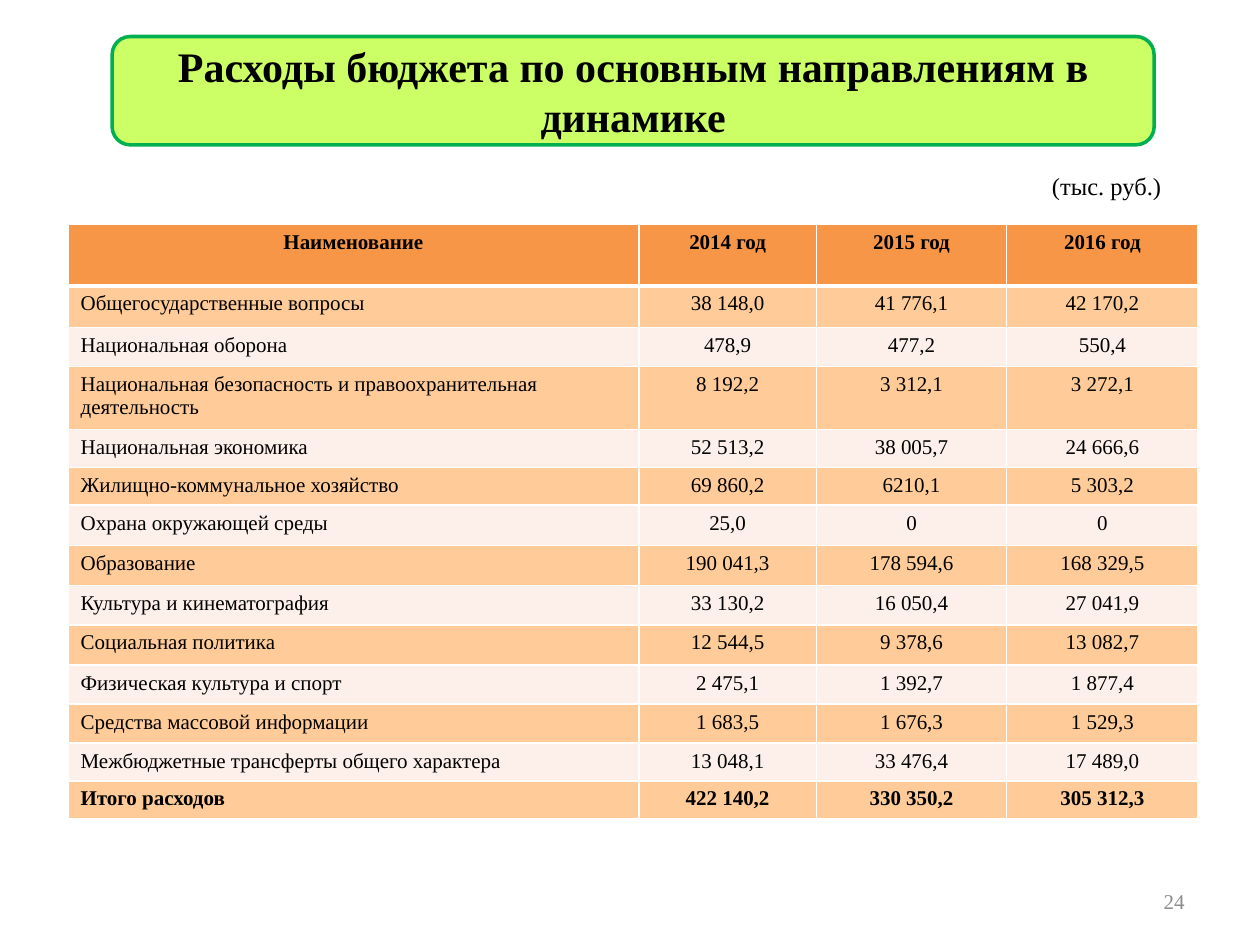
"""Build a slide with a table of budget expenditure by area for 2014–2016."""

from dataclasses import dataclass

from lxml import etree
from pptx import Presentation
from pptx.dml.color import RGBColor
from pptx.enum.shapes import MSO_SHAPE
from pptx.enum.text import MSO_ANCHOR, PP_ALIGN
from pptx.oxml.ns import qn
from pptx.slide import Slide
from pptx.table import _Cell
from pptx.text.text import TextFrame
from pptx.util import Inches, Pt

ROUNDED_RECTANGLE = MSO_SHAPE.ROUNDED_RECTANGLE
LEFT, CENTER, RIGHT = PP_ALIGN.LEFT, PP_ALIGN.CENTER, PP_ALIGN.RIGHT
TOP, MIDDLE = MSO_ANCHOR.TOP, MSO_ANCHOR.MIDDLE

FONT = "Times New Roman"
BLACK = RGBColor(0x00, 0x00, 0x00)
WHITE = RGBColor(0xFF, 0xFF, 0xFF)
GRAY = RGBColor(0x8C, 0x8C, 0x8C)
LIME = RGBColor(0xCC, 0xFF, 0x66)
GREEN = RGBColor(0x00, 0xB0, 0x50)
ORANGE = RGBColor(0xF7, 0x96, 0x46)
BANDS = (RGBColor(0xFF, 0xCC, 0x99), RGBColor(0xFD, 0xEF, 0xE9))

COLUMN_WIDTHS = (4.53, 1.41, 1.51, 1.52)


@dataclass(frozen=True)
class BudgetRow:
    """One table row: its name, yearly values, height in inches and weight."""

    name: str
    values: tuple[str, str, str]
    height: float = 0.31
    bold: bool = False


ROWS = (
    BudgetRow("Наименование", ("2014 год", "2015 год", "2016 год"), 0.49, True),
    BudgetRow("Общегосударственные вопросы", ("38 148,0", "41 776,1", "42 170,2"), 0.33),
    BudgetRow("Национальная оборона", ("478,9", "477,2", "550,4")),
    BudgetRow(
        "Национальная безопасность и правоохранительная деятельность",
        ("8 192,2", "3 312,1", "3 272,1"),
        0.5,
    ),
    BudgetRow("Национальная экономика", ("52 513,2", "38 005,7", "24 666,6"), 0.3),
    BudgetRow("Жилищно-коммунальное хозяйство", ("69 860,2", "6210,1", "5 303,2"), 0.3),
    BudgetRow("Охрана окружающей среды", ("25,0", "0", "0"), 0.32),
    BudgetRow("Образование", ("190 041,3", "178 594,6", "168 329,5"), 0.32),
    BudgetRow("Культура и кинематография", ("33 130,2", "16 050,4", "27 041,9")),
    BudgetRow("Социальная политика", ("12 544,5", "9 378,6", "13 082,7"), 0.32),
    BudgetRow("Физическая культура и спорт", ("2 475,1", "1 392,7", "1 877,4")),
    BudgetRow("Средства массовой информации", ("1 683,5", "1 676,3", "1 529,3")),
    BudgetRow(
        "Межбюджетные трансферты общего характера",
        ("13 048,1", "33 476,4", "17 489,0"),
        0.3,
    ),
    BudgetRow("Итого расходов", ("422 140,2", "330 350,2", "305 312,3"), 0.3, True),
)


def write_text(
    frame: TextFrame,
    text: str,
    *,
    size: int = 12,
    bold: bool = False,
    color: RGBColor = BLACK,
    align: PP_ALIGN = LEFT,
    anchor: MSO_ANCHOR = TOP,
    wrap: bool = True,
) -> None:
    """Write one formatted paragraph into a text frame."""
    frame.word_wrap = wrap
    frame.vertical_anchor = anchor
    paragraph = frame.paragraphs[0]
    paragraph.alignment = align
    run = paragraph.add_run()
    run.text = text
    run.font.name = FONT
    run.font.size = Pt(size)
    run.font.bold = bold
    run.font.color.rgb = color


def set_borders(cell: _Cell, top: int, bottom: int) -> None:
    """Give a cell white borders, with top and bottom widths in points."""
    properties = cell._tc.get_or_add_tcPr()
    widths = {"a:lnL": 1, "a:lnR": 1, "a:lnT": top, "a:lnB": bottom}
    for index, (tag, width) in enumerate(widths.items()):
        line = etree.Element(qn(tag), w=str(Pt(width)))
        fill = etree.SubElement(line, qn("a:solidFill"))
        etree.SubElement(fill, qn("a:srgbClr"), val=str(WHITE))
        properties.insert(index, line)


def add_title(slide: Slide) -> None:
    """Draw the rounded title banner."""
    banner = slide.shapes.add_shape(
        ROUNDED_RECTANGLE, Inches(0.89), Inches(0.29), Inches(8.27), Inches(0.86)
    )
    banner.shadow.inherit = False
    banner.fill.solid()
    banner.fill.fore_color.rgb = LIME
    banner.line.color.rgb = GREEN
    banner.line.width = Pt(2)
    write_text(
        banner.text_frame,
        "Расходы бюджета по основным направлениям в динамике",
        size=24,
        bold=True,
        align=CENTER,
        anchor=MIDDLE,
    )


def add_budget_table(slide: Slide) -> None:
    """Draw the expenditure table with banded rows."""
    table = slide.shapes.add_table(
        len(ROWS),
        len(COLUMN_WIDTHS),
        Inches(0.54),
        Inches(1.78),
        Inches(sum(COLUMN_WIDTHS)),
        Inches(sum(row.height for row in ROWS)),
    ).table
    for column, width in zip(table.columns, COLUMN_WIDTHS):
        column.width = Inches(width)
    for row_index, row in enumerate(ROWS):
        table.rows[row_index].height = Inches(row.height)
        is_header = row_index == 0
        for column_index, text in enumerate((row.name, *row.values)):
            cell = table.cell(row_index, column_index)
            is_label = column_index == 0 and not is_header
            write_text(
                cell.text_frame,
                text,
                bold=row.bold,
                align=LEFT if is_label else CENTER,
            )
            cell.fill.solid()
            cell.fill.fore_color.rgb = ORANGE if is_header else BANDS[(row_index - 1) % 2]
            set_borders(cell, top=3 if row_index == 1 else 1, bottom=3 if is_header else 1)


def add_label(
    slide: Slide, text: str, left: float, top: float, width: float, height: float, **text_format
) -> None:
    """Add a text box, with its place and size in inches."""
    box = slide.shapes.add_textbox(Inches(left), Inches(top), Inches(width), Inches(height))
    write_text(box.text_frame, text, **text_format)


def main() -> None:
    """Build and save the presentation."""
    presentation = Presentation()
    presentation.slide_width = Inches(10)
    presentation.slide_height = Inches(7.5)
    slide = presentation.slides.add_slide(presentation.slide_layouts[6])
    add_title(slide)
    add_budget_table(slide)
    add_label(slide, "(тыс. руб.)", 8.25, 1.31, 1.08, 0.34, size=14, wrap=False)
    add_label(slide, "24", 7.17, 6.95, 2.33, 0.4, color=GRAY, align=RIGHT, anchor=MIDDLE)
    presentation.save("out.pptx")


if __name__ == "__main__":
    main()
